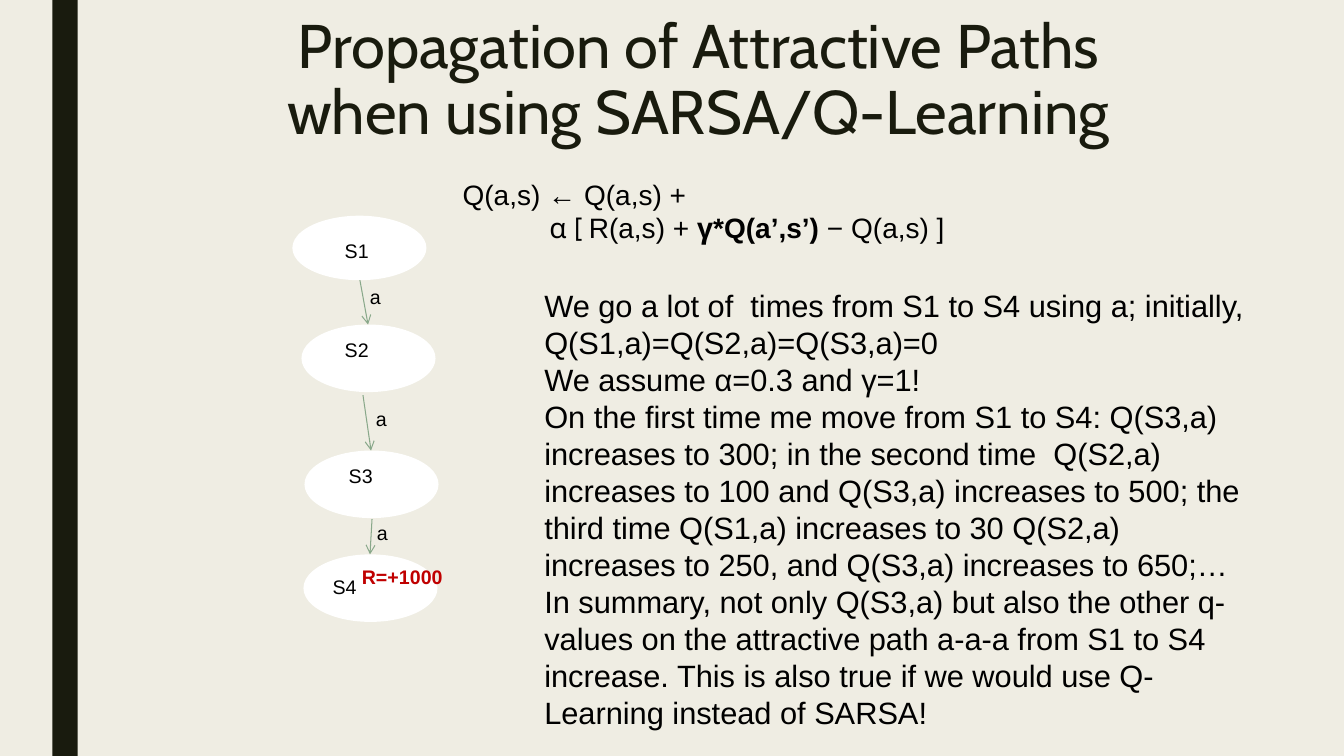
from lxml import etree
from pptx import Presentation
from pptx.dml.color import RGBColor
from pptx.enum.shapes import MSO_CONNECTOR as Connector, MSO_SHAPE as Preset
from pptx.enum.text import MSO_ANCHOR as Anchor, MSO_AUTO_SIZE as AutoSize, PP_ALIGN as Align
from pptx.oxml.ns import qn
from pptx.util import Inches, Pt

COLORS = {
    "background": "EFEDE3",
    "dark": "191B0E",
    "state": "FFFFFF",
    "arrow": "89A88A",
    "text": "000000",
    "reward": "C00000",
}

# Ellipse left, top, height; label left, top
STATES = {
    "S1": (2.9, 2.14, 0.64, 3.32, 2.32),
    "S2": (2.99, 3.22, 0.67, 3.32, 3.3),
    "S3": (3.02, 4.47, 0.67, 3.36, 4.55),
    "S4": (3.01, 5.5, 0.67, 3.2, 5.65),
}

# Arrow start, arrow end, label position
ACTIONS = [
    ((3.57, 2.78), (3.65, 3.22), (3.57, 2.78)),
    ((3.6, 3.92), (3.68, 4.47), (3.63, 3.99)),
    ((3.69, 5.15), (3.67, 5.5), (3.64, 5.12)),
]

EXPLANATION = [
    "We go a lot of  times from S1 to S4 using a; initially, Q(S1,a)=Q(S2,a)=Q(S3,a)=0",
    "We assume α=0.3 and γ=1!",
    "On the first time me move from S1 to S4: Q(S3,a) increases to 300; "
    "in the second time  Q(S2,a) increases to 100 and Q(S3,a) increases to 500; "
    "the third time Q(S1,a) increases to 30 Q(S2,a) increases to 250, "
    "and Q(S3,a) increases to 650;… In summary, not only Q(S3,a) but also the other "
    "q-values on the attractive path a-a-a from S1 to S4 increase. "
    "This is also true if we would use Q-Learning instead of SARSA!",
]


def color(name):
    return RGBColor.from_string(COLORS[name])


def add_span(para, text, size=14, font="Arial", fill="text", bold=False):
    span = para.add_run()
    span.text = text
    span.font.size = Pt(size)
    span.font.name = font
    span.font.bold = bold
    span.font.color.rgb = color(fill)


def add_text(page, left, top, width, height, paragraphs, wrap=True, **style):
    """Each paragraph is a string or a list of (text, style changes)."""
    box = page.shapes.add_textbox(Inches(left), Inches(top), Inches(width), Inches(height))
    frame = box.text_frame
    frame.word_wrap = wrap
    frame.auto_size = AutoSize.SHAPE_TO_FIT_TEXT
    for index, content in enumerate(paragraphs):
        para = frame.add_paragraph() if index else frame.paragraphs[0]
        spans = [(content, {})] if isinstance(content, str) else content
        for text, changes in spans:
            add_span(para, text, **{**style, **changes})
    return box


def add_filled(page, preset, left, top, width, height, fill):
    shape = page.shapes.add_shape(
        preset, Inches(left), Inches(top), Inches(width), Inches(height))
    shape.shadow.inherit = False
    shape.fill.solid()
    shape.fill.fore_color.rgb = color(fill)
    shape.line.fill.background()


def add_arrow(page, start, end):
    points = [Inches(value) for value in (*start, *end)]
    arrow = page.shapes.add_connector(Connector.STRAIGHT, *points)
    arrow.line.color.rgb = color("arrow")
    arrow.line.width = Pt(0.75)
    etree.SubElement(arrow.line._get_or_add_ln(), qn("a:tailEnd"), type="arrow")
    etree.SubElement(arrow._element.spPr, qn("a:effectLst"))


def set_title(page, text):
    title = page.shapes.title
    title.left, title.top = Inches(1.68), Inches(0.11)
    title.width, title.height = Inches(10.5), Inches(1.62)
    frame = title.text_frame
    frame.word_wrap = True
    frame.auto_size = AutoSize.NONE
    frame.vertical_anchor = Anchor.TOP
    para = frame.paragraphs[0]
    para.alignment = Align.CENTER
    para.line_spacing = 0.89
    first, *others = text.split("\n")
    style = {"size": 44, "font": "Cabin", "fill": "dark"}
    add_span(para, first, **style)
    for line in others:
        para.add_line_break()
        add_span(para, line, **style)


def add_state_chain(page):
    for left, top, height, _, _ in STATES.values():
        add_filled(page, Preset.OVAL, left, top, 1.33, height, "state")
    for name, (_, _, _, left, top) in STATES.items():
        add_text(page, left, top, 0.75, 0.34, [name])
    add_text(page, 3.49, 5.56, 1.01, 0.34, ["R=+1000"], wrap=False,
             fill="reward", bold=True)
    for start, end, label in ACTIONS:
        add_arrow(page, start, end)
        add_text(page, *label, 0.31, 0.34, ["a"], wrap=False)


def add_update_rule(page):
    rule = add_text(page, 4.49, 1.71, 6.1, 0.77, [
        "Q(a,s) ← Q(a,s) +",
        [
            ("α [ ", {"font": "Karla"}),
            ("R(a,s) + ", {}),
            ("γ", {"font": "Karla", "bold": True}),
            ("*Q(a’,s’) ", {"bold": True}),
            ("− Q(a,s) ]", {}),
        ],
    ], size=20)
    second = rule.text_frame.paragraphs[1]
    second._p.get_or_add_pPr().set("marL", str(Inches(0.86)))


def main():
    deck = Presentation()
    deck.slide_width, deck.slide_height = Inches(13.33), Inches(7.5)
    page = deck.slides.add_slide(deck.slide_layouts[5])
    page.background.fill.solid()
    page.background.fill.fore_color.rgb = color("background")

    add_filled(page, Preset.RECTANGLE, 0.52, 0, 0.25, 7.5, "dark")
    set_title(page, "Propagation of Attractive Paths\nwhen using SARSA/Q-Learning")
    add_state_chain(page)
    add_text(page, 5.3, 2.8, 7.29, 4.54, EXPLANATION, size=22)
    add_update_rule(page)
    deck.save("out.pptx")


if __name__ == "__main__":
    main()
